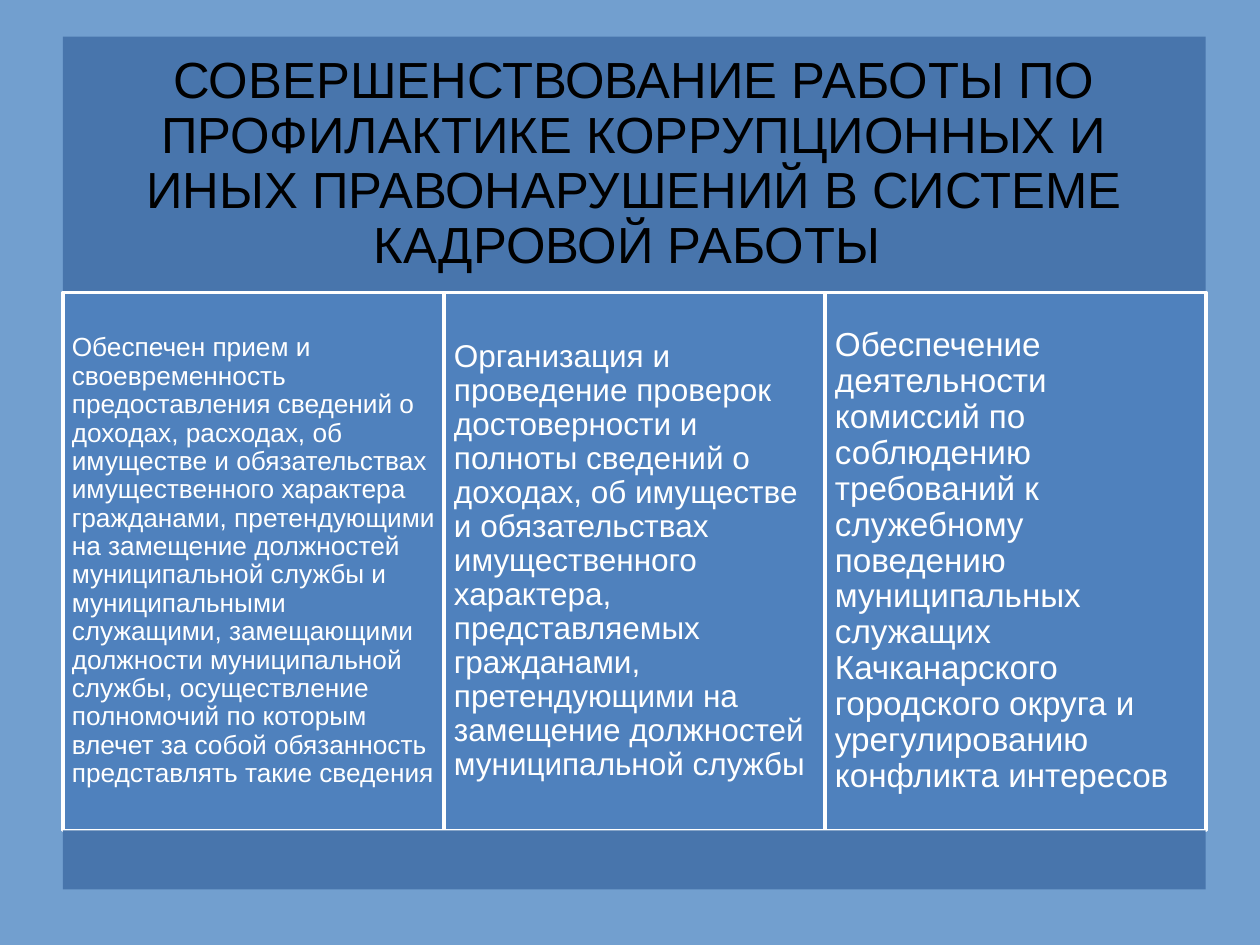
from pptx import Presentation
from pptx.dml.color import RGBColor
from pptx.enum.shapes import MSO_SHAPE as Shape
from pptx.enum.text import MSO_ANCHOR as Anchor, PP_ALIGN as Align
from pptx.util import Inches, Pt

SKY = RGBColor(0x72, 0x9F, 0xCF)
BAND = RGBColor(0x48, 0x75, 0xAC)
PANEL = RGBColor(0x4F, 0x81, 0xBD)
WHITE = RGBColor(0xFF, 0xFF, 0xFF)
BLACK = RGBColor(0, 0, 0)

LEFT, TOP, WIDTH = 0.5, 0.29, 9.07
HEAD, BODY, FOOT = 2.03, 4.27, 0.47

TITLE = ("СОВЕРШЕНСТВОВАНИЕ РАБОТЫ ПО ПРОФИЛАКТИКЕ КОРРУПЦИОННЫХ И ИНЫХ "
         "ПРАВОНАРУШЕНИЙ В СИСТЕМЕ КАДРОВОЙ РАБОТЫ ")
DUTIES = [
    ("Обеспечен прием и своевременность предоставления сведений о доходах, "
     "расходах, об имуществе и обязательствах имущественного характера "
     "гражданами, претендующими на замещение должностей муниципальной службы "
     "и муниципальными служащими, замещающими должности муниципальной службы, "
     "осуществление полномочий по которым влечет за собой обязанность "
     "представлять такие сведения", 15, 0.07, 5.6),
    ("Организация и проведение проверок достоверности и полноты сведений о "
     "доходах, об имуществе и обязательствах имущественного характера, "
     "представляемых гражданами, претендующими на замещение должностей "
     "муниципальной службы", 18, 0.08, 6.7),
    ("Обеспечение деятельности комиссий по соблюдению требований к служебному "
     "поведению муниципальных служащих Качканарского городского округа и "
     "урегулированию конфликта интересов", 19, 0.08, 6.7),
]


class Board:
    """Draws bands, panels and their text on one slide in a shared style."""

    def __init__(self, slide, font="Arial"):
        self.slide = slide
        self.font = font
        fill = slide.background.fill
        fill.solid()
        fill.fore_color.rgb = SKY

    def box(self, x, y, w, h, color):
        box = self.slide.shapes.add_shape(
            Shape.RECTANGLE, Inches(x), Inches(y), Inches(w), Inches(h))
        box.shadow.inherit = False
        box.fill.solid()
        box.fill.fore_color.rgb = color
        box.line.fill.background()
        return box

    def panel(self, x, y, w, h):
        box = self.box(x, y, w, h, PANEL)
        box.line.color.rgb = WHITE
        box.line.width = Pt(2)
        return box

    def label(self, box, text, size, color, inset, after, align=Align.LEFT):
        frame = box.text_frame
        frame.text = text
        frame.word_wrap = True
        frame.vertical_anchor = Anchor.MIDDLE
        frame.margin_left = frame.margin_right = Inches(inset)
        frame.margin_top = frame.margin_bottom = Inches(inset)
        para = frame.paragraphs[0]
        para.alignment = align
        para.line_spacing = 0.9
        para.space_after = Pt(after)
        font = para.runs[0].font
        font.name = self.font
        font.size = Pt(size)
        font.color.rgb = color


def main():
    deck = Presentation()
    deck.slide_width, deck.slide_height = Inches(10), Inches(7.5)
    board = Board(deck.slides.add_slide(deck.slide_layouts[6]))

    head = board.box(LEFT, TOP, WIDTH, HEAD, BAND)
    board.label(head, TITLE, 29, BLACK, 0.12, 10.2, Align.CENTER)

    top = TOP + HEAD
    wide = WIDTH / len(DUTIES)
    for col, (text, size, inset, after) in enumerate(DUTIES):
        panel = board.panel(LEFT + col * wide, top, wide, BODY)
        board.label(panel, text, size, WHITE, inset, after)

    board.box(LEFT, top + BODY, WIDTH, FOOT, BAND)
    deck.save("out.pptx")


if __name__ == "__main__":
    main()
